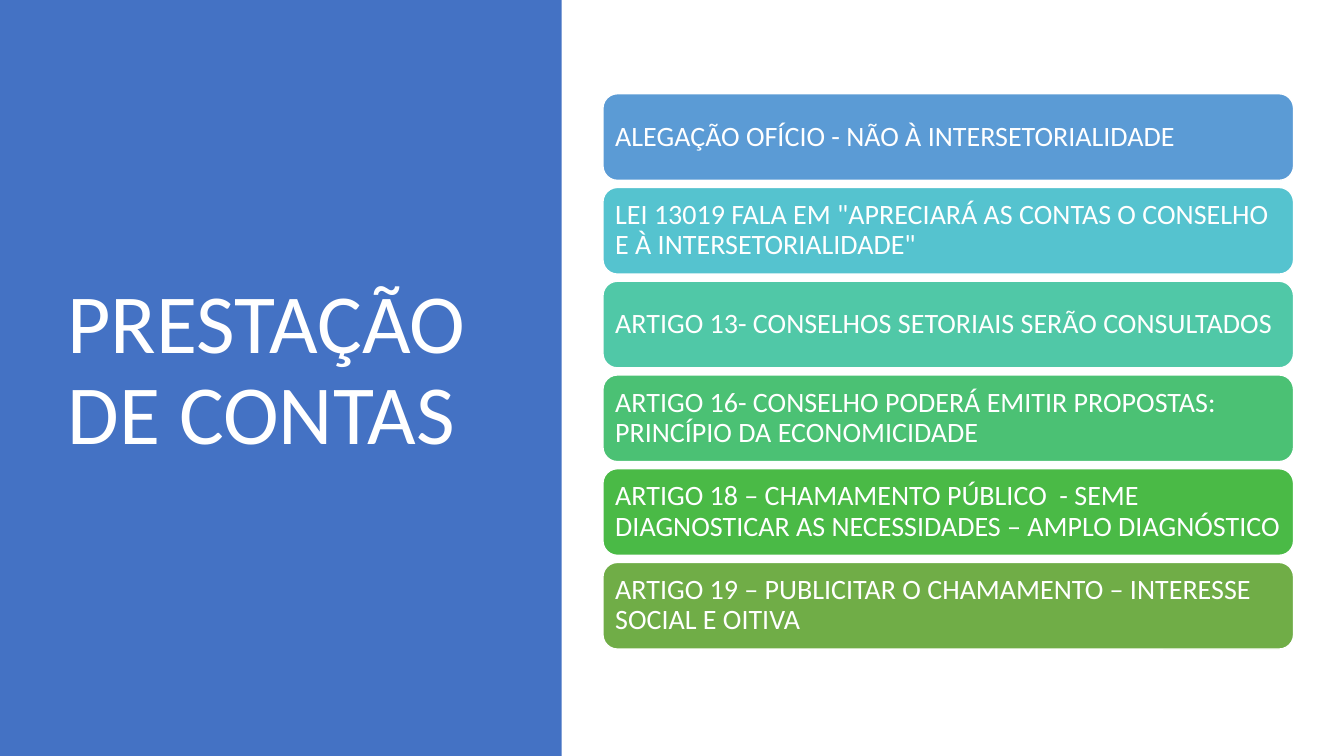
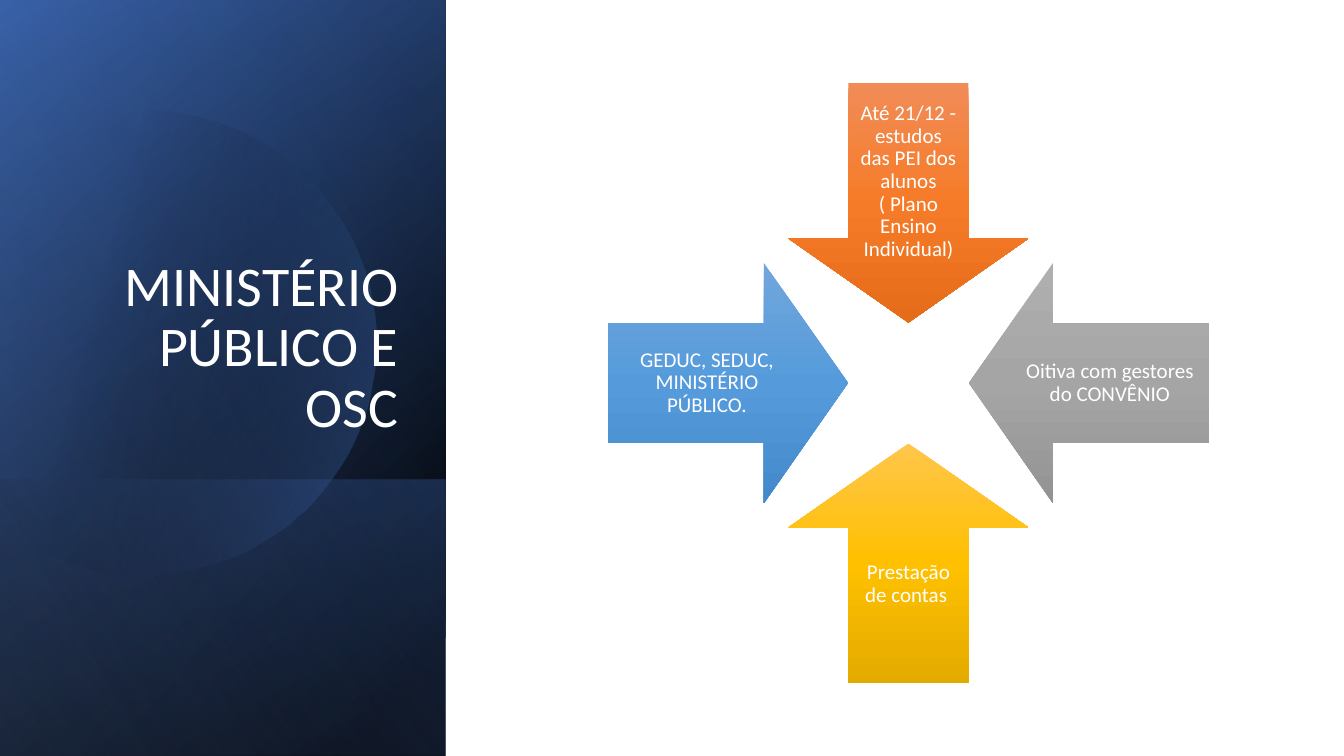
import math
from dataclasses import dataclass

from lxml import etree
from pptx import Presentation
from pptx import util as u
from pptx.dml.color import RGBColor
from pptx.enum import shapes, text
from pptx.oxml.ns import qn

PX = 9144
SHAPE = shapes.MSO_SHAPE
ANCHOR = text.MSO_ANCHOR
ALIGN = text.PP_ALIGN


@dataclass(frozen=True)
class Theme:
    font: str = "Calibri"
    white: str = "FFFFFF"
    black: str = "000000"
    blue: str = "4472C4"
    navy: str = "2F5597"
    mist: str = "8FAADC"
    cards: tuple = ("5B9BD5", "55C3CF", "50C8A7", "4BC174", "4ABA46", "70AD47")
    orange: tuple = ("F18C57", "F67B28", "E56C19")
    gray: tuple = ("AFAFAF", "A5A5A5", "939393")
    gold: tuple = ("FFC64B", "FFC000", "E3AB00")
    sky: tuple = ("71A6DB", "559BDB", "448ACA")
    large_title: int = 60
    title: int = 40
    card_text: int = 20
    arrow_text: int = 15


THEME = Theme()


def px(value):
    return u.Emu(round(value * PX))


def apply(target, values):
    for name, value in values.items():
        setattr(target, name, value)


class Deck:
    def __init__(self, theme, width, height):
        self.theme = theme
        self.presentation = Presentation()
        apply(self.presentation, {"slide_width": px(width), "slide_height": px(height)})
        self.slide = None

    def new_slide(self):
        self.slide = self.presentation.slides.add_slide(self.presentation.slide_layouts[5])

    def title(self, words, box, size, anchor, align):
        shape = self.slide.shapes.title
        shape.element.getparent().append(shape.element)
        apply(shape, dict(zip(("left", "top", "width", "height"), map(px, box))))
        self.label(shape, words, size, anchor, align, 10)

    def label(self, shape, words, size, anchor, align, inset):
        frame = shape.text_frame
        frame.text = words
        apply(frame, {"word_wrap": True, "auto_size": text.MSO_AUTO_SIZE.NONE,
                      "vertical_anchor": anchor})
        apply(frame, {f"margin_{side}": px(inset) for side in ("left", "top", "right", "bottom")})
        paragraph = frame.paragraphs[0]
        apply(paragraph, {"alignment": align, "line_spacing": 0.9})
        font = paragraph.runs[0].font
        apply(font, {"name": self.theme.font, "size": u.Pt(size)})
        font.color.rgb = RGBColor.from_string(self.theme.white)

    def block(self, kind, box):
        return self.clean(self.slide.shapes.add_shape(kind, *map(px, box)))

    def clean(self, shape):
        shape.shadow.inherit = False
        shape.line.fill.background()
        return shape

    def solid(self, shape, color):
        shape.fill.solid()
        shape.fill.fore_color.rgb = RGBColor.from_string(color)

    def gradient(self, shape, stops, angle):
        shape.fill.background()
        properties = shape.element.spPr
        fill = etree.Element(qn("a:gradFill"), rotWithShape="1")
        stop_list = etree.SubElement(fill, qn("a:gsLst"))
        for position, color, opacity in stops:
            stop = etree.SubElement(stop_list, qn("a:gs"), pos=str(position * 1000))
            paint = etree.SubElement(stop, qn("a:srgbClr"), val=color)
            if opacity < 100:
                etree.SubElement(paint, qn("a:alpha"), val=str(opacity * 1000))
        etree.SubElement(fill, qn("a:lin"), ang=str(angle * 60000), scaled="0")
        properties.replace(properties.find(qn("a:noFill")), fill)

    def panel(self, box, stops, angle):
        self.gradient(self.block(SHAPE.RECTANGLE, box), stops, angle)

    def clipped_circle(self, center_x, center_y, radius, stops, angle):
        limit = math.acos(-center_x / radius)
        steps = 90
        angles = [limit * (2 * step / steps - 1) for step in range(steps + 1)]
        points = [(center_x + radius * math.cos(a), center_y + radius * math.sin(a))
                  for a in angles]
        builder = self.slide.shapes.build_freeform(*points[0], scale=PX)
        builder.add_line_segments(points[1:], close=True)
        self.gradient(self.clean(builder.convert_to_shape()), stops, angle)

    def card(self, words, box, color):
        shape = self.block(SHAPE.ROUNDED_RECTANGLE, box)
        self.solid(shape, color)
        shape.line.color.rgb = RGBColor.from_string(self.theme.white)
        shape.line.width = u.Pt(1)
        self.label(shape, words, self.theme.card_text, ANCHOR.MIDDLE, ALIGN.LEFT, 8)

    def arrow(self, kind, words, box, colors):
        shape = self.block(kind, box)
        shape.adjustments[0] = 0.5
        shape.adjustments[1] = 0.35
        stops = [(50 * index, color, 100) for index, color in enumerate(colors)]
        self.gradient(shape, stops, 90)
        self.label(shape, words, self.theme.arrow_text, ANCHOR.MIDDLE, ALIGN.CENTER, 12)


def accounts_slide(deck):
    theme = deck.theme
    deck.new_slide()
    deck.solid(deck.block(SHAPE.RECTANGLE, (0, 0, 557, 750)), theme.blue)
    deck.title("PRESTAÇÃO DE CONTAS", (57, 68, 416, 602), theme.large_title,
               ANCHOR.MIDDLE, ALIGN.LEFT)
    topics = (
        "ALEGAÇÃO OFÍCIO - NÃO À INTERSETORIALIDADE",
        'LEI 13019 FALA EM "APRECIARÁ AS CONTAS O CONSELHO E À INTERSETORIALIDADE"',
        "ARTIGO 13- CONSELHOS SETORIAIS SERÃO CONSULTADOS",
        "ARTIGO 16- CONSELHO PODERÁ EMITIR PROPOSTAS: PRINCÍPIO DA ECONOMICIDADE",
        "ARTIGO 18 – CHAMAMENTO PÚBLICO  - SEME DIAGNOSTICAR AS NECESSIDADES – AMPLO DIAGNÓSTICO",
        "ARTIGO 19 – PUBLICITAR O CHAMAMENTO – INTERESSE SOCIAL E OITIVA",
    )
    for index, (topic, color) in enumerate(zip(topics, theme.cards)):
        deck.card(topic, (598, 93 + 93 * index, 685, 86), color)


def ministry_slide(deck):
    theme = deck.theme
    deck.new_slide()
    side = (0, 0, 442, 750)
    deck.panel(side, [(8, theme.black, 100), (100, theme.navy, 100)], 220)
    deck.panel(side, [(0, theme.black, 0), (99, theme.blue, 46)], 240)
    deck.panel((0, 476, 442, 274), [(2, theme.blue, 29), (100, theme.black, 30)], 140)
    deck.clipped_circle(143, 340, 230, [(29, theme.black, 0), (100, theme.blue, 43)], 14)
    deck.panel(side, [(0, theme.black, 0), (99, theme.mist, 11)], 150)
    deck.title("MINISTÉRIO PÚBLICO E OSC", (64, 184, 341, 262), theme.title,
               ANCHOR.BOTTOM, ALIGN.RIGHT)
    size, reach, center_x, center_y = 238, 179, 901, 380
    arrows = (
        (SHAPE.DOWN_ARROW, 0, -1, theme.orange,
         "Até 21/12 - estudos das PEI dos alunos ( Plano Ensino Individual)"),
        (SHAPE.LEFT_ARROW, 1, 0, theme.gray, "Oitiva com gestores do CONVÊNIO"),
        (SHAPE.UP_ARROW, 0, 1, theme.gold, "Prestação de contas "),
        (SHAPE.RIGHT_ARROW, -1, 0, theme.sky, "GEDUC, SEDUC, MINISTÉRIO PÚBLICO."),
    )
    for kind, across, down, colors, words in arrows:
        left = center_x + reach * across - size // 2
        top = center_y + reach * down - size // 2
        deck.arrow(kind, words, (left, top, size, size), colors)


def main():
    deck = Deck(THEME, 1333, 750)
    accounts_slide(deck)
    ministry_slide(deck)
    deck.presentation.save("out.pptx")


if __name__ == "__main__":
    main()
